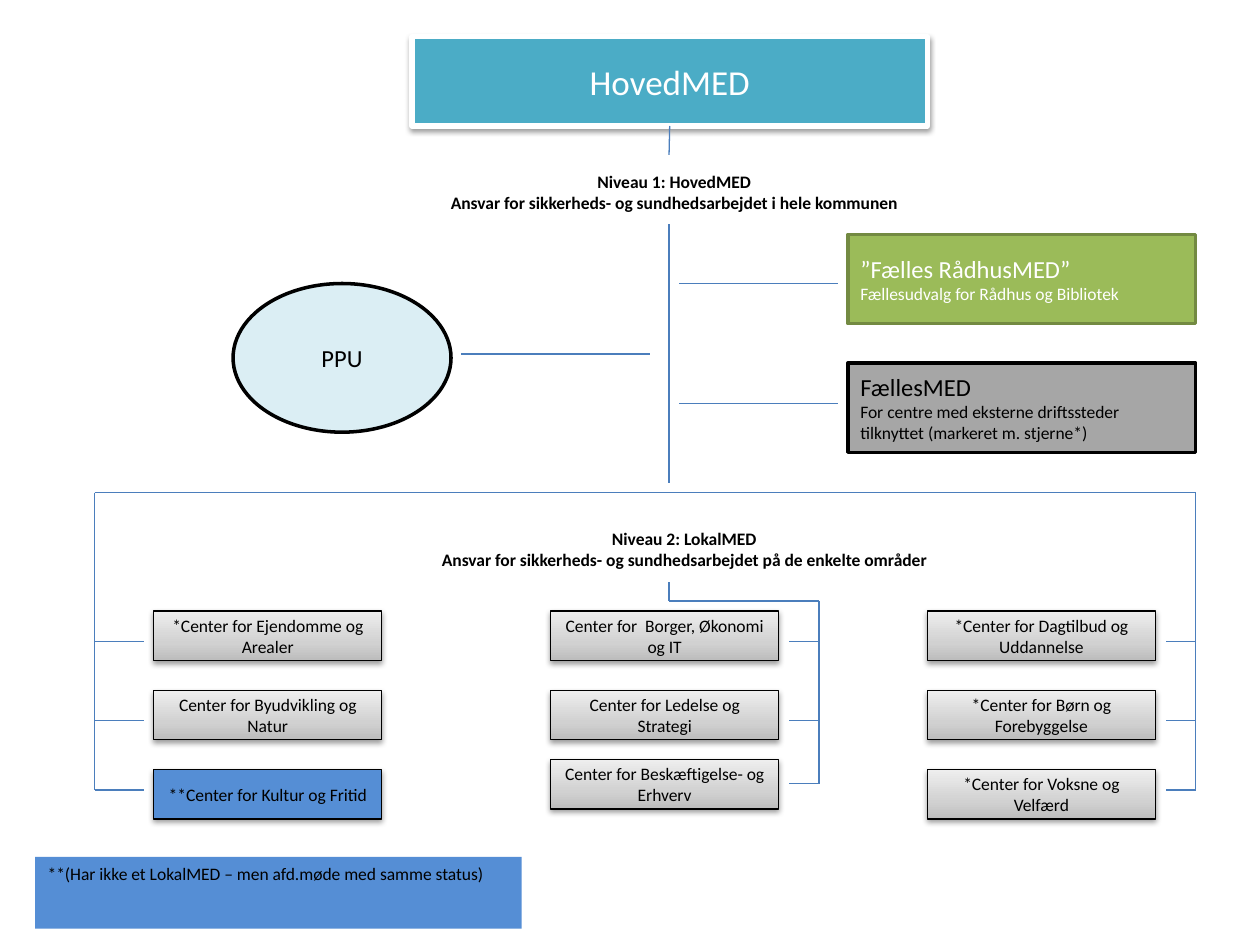
import pptx
import pptx.dml.color
import pptx.enum.shapes
import pptx.enum.text
import pptx.oxml
import pptx.util
from pptx.util import Inches

DRAWING = 'xmlns:a="http://schemas.openxmlformats.org/drawingml/2006/main"'
RECTANGLE = pptx.enum.shapes.MSO_SHAPE.RECTANGLE
OVAL = pptx.enum.shapes.MSO_SHAPE.OVAL
LEFT = pptx.enum.text.PP_ALIGN.LEFT
CENTER = pptx.enum.text.PP_ALIGN.CENTER
TOP = pptx.enum.text.MSO_ANCHOR.TOP
MIDDLE = pptx.enum.text.MSO_ANCHOR.MIDDLE
BLACK, WHITE, BLUE, LINE_BLUE = "000000", "FFFFFF", "558ED5", "4B7EBC"
GRAY_STOPS = [(0, "BDBDBD"), (35, "D1D1D1"), (100, "EEEEEE")]
TRUNK, BRANCH_TOP = 5.31, 3.91

MAIN = ((3.27, 0.29, 4.09, 0.71), [("HovedMED", 20)],
        dict(fill="4BACC6", line=WHITE, width=3, color=WHITE, shadow=True))
COMMITTEES = [
    ((6.73, 1.86, 2.76, 0.71),
     [("”Fælles RådhusMED”", 14), ("Fællesudvalg for Rådhus og Bibliotek", 10)],
     dict(fill="9BBB59", line="738A42", width=2, color=WHITE, align=LEFT)),
    ((6.73, 2.88, 2.76, 0.71),
     [("FællesMED", 14), ("For centre med eksterne driftssteder tilknyttet (markeret m. stjerne*)", 10)],
     dict(fill="A6A6A6", line=BLACK, width=2, align=LEFT)),
    ((1.85, 2.25, 1.73, 1.18), [("PPU", 14)],
     dict(kind=OVAL, fill="DBEEF4", line=BLACK, width=2)),
    ((0.28, 6.8, 3.86, 0.57), [("**(Har ikke et LokalMED – men afd.møde med samme status)", 10)],
     dict(fill=BLUE, align=LEFT, anchor=TOP)),
]
LEVELS = [
    ((2.95, 1.31, 4.8, 0.44), ["Niveau 1: HovedMED",
                               "Ansvar for sikkerheds- og sundhedsarbejdet i hele kommunen"]),
    ((3.03, 4.14, 4.8, 0.44), ["Niveau 2: LokalMED",
                               "Ansvar for sikkerheds- og sundhedsarbejdet på de enkelte områder"]),
]
CENTER_WIDTH, CENTER_HEIGHT = 1.81, 0.39
COLUMNS = [
    dict(left=1.22, spine=0.75, tick=1.14, top=BRANCH_TOP, centers=[
        ("*Center for Ejendomme og Arealer", 4.85, 5.09),
        ("Center for Byudvikling og Natur", 5.48, 5.72),
        ("**Center for Kultur og Fritid", 6.11, 6.27)]),
    dict(left=4.37, spine=6.5, tick=6.26, top=4.77, centers=[
        ("Center for  Borger, Økonomi og IT", 4.85, 5.09),
        ("Center for Ledelse og Strategi", 5.48, 5.72),
        ("Center for Beskæftigelse- og Erhverv", 6.03, 6.22)]),
    dict(left=7.36, spine=9.49, tick=9.25, top=BRANCH_TOP, centers=[
        ("*Center for Dagtilbud og Uddannelse", 4.85, 5.09),
        ("*Center for Børn og Forebyggelse", 5.48, 5.72),
        ("*Center for Voksne og Velfærd", 6.11, 6.27)]),
]
LINES = [
    (TRUNK, 1.78, TRUNK, 3.83), (TRUNK, 4.62, TRUNK, 4.77),
    (0.75, BRANCH_TOP, 9.49, BRANCH_TOP), (TRUNK, 4.77, 6.5, 4.77),
    (3.66, 2.81, 5.16, 2.81), (5.39, 2.25, 6.65, 2.25), (5.39, 3.2, 6.65, 3.2),
]


def rgb(value):
    """Turn a hex string into a colour."""
    return pptx.dml.color.RGBColor.from_string(value)


def write_text(shape, paragraphs, color=BLACK, align=CENTER, anchor=MIDDLE, bold=False):
    """Fill a shape with (text, size) paragraphs."""
    frame = shape.text_frame
    frame.word_wrap = True
    frame.vertical_anchor = anchor
    for index, (text, size) in enumerate(paragraphs):
        paragraph = frame.add_paragraph() if index else frame.paragraphs[0]
        paragraph.alignment = align
        run = paragraph.add_run()
        run.text = text
        run.font.color.rgb = rgb(color)
        for name, value in dict(name="Calibri", size=pptx.util.Pt(size), bold=bold).items():
            setattr(run.font, name, value)


def apply_gradient(shape, stops):
    """Give a shape a gradient that runs from bottom to top."""
    marks = "".join(f'<a:gs pos="{position * 1000}"><a:srgbClr val="{color}"/></a:gs>'
                    for position, color in stops)
    shape.element.spPr.insert(2, pptx.oxml.parse_xml(
        f'<a:gradFill {DRAWING} rotWithShape="1"><a:gsLst>{marks}</a:gsLst>'
        '<a:lin ang="16200000" scaled="0"/></a:gradFill>'))


def apply_shadow(shape):
    """Give a shape a soft shadow below it."""
    shape.element.spPr.append(pptx.oxml.parse_xml(
        f'<a:effectLst {DRAWING}><a:outerShdw blurRad="40000" dist="20000" dir="5400000" '
        'rotWithShape="0"><a:srgbClr val="000000"><a:alpha val="38000"/></a:srgbClr>'
        '</a:outerShdw></a:effectLst>'))


def add_box(slide, place, paragraphs, kind=RECTANGLE, fill=None, line=None, width=0.75,
            shadow=False, **text_format):
    """Add a filled shape with text; no fill means the grey gradient."""
    shape = slide.shapes.add_shape(kind, *map(Inches, place))
    if fill:
        shape.fill.solid()
        shape.fill.fore_color.rgb = rgb(fill)
    else:
        apply_gradient(shape, GRAY_STOPS)
    if line:
        shape.line.color.rgb = rgb(line)
        shape.line.width = pptx.util.Pt(width)
    else:
        shape.line.fill.background()
    if shadow:
        apply_shadow(shape)
    else:
        shape.shadow.inherit = False
    write_text(shape, paragraphs, **text_format)
    return shape


def add_line(slide, *ends):
    """Add a thin straight connector."""
    connector = slide.shapes.add_connector(
        pptx.enum.shapes.MSO_CONNECTOR.STRAIGHT, *map(Inches, ends))
    connector.line.color.rgb = rgb(LINE_BLUE)
    connector.line.width = pptx.util.Pt(0.75)
    connector.element.spPr.append(pptx.oxml.parse_xml(f"<a:effectLst {DRAWING}/>"))
    return connector


def main():
    """Build the organisation chart."""
    presentation = pptx.Presentation()
    presentation.slide_width, presentation.slide_height = Inches(10), Inches(7.5)
    slide = presentation.slides.add_slide(presentation.slide_layouts[6])

    place, paragraphs, style = MAIN
    main_box = add_box(slide, place, paragraphs, **style)
    add_line(slide, TRUNK, 1, TRUNK, 1.23).begin_connect(main_box, 2)
    for place, paragraphs, style in COMMITTEES:
        add_box(slide, place, paragraphs, **style)
    for place, texts in LEVELS:
        label = slide.shapes.add_textbox(*map(Inches, place))
        write_text(label, [(text, 10) for text in texts], anchor=TOP, bold=True)
    for ends in LINES:
        add_line(slide, *ends)

    for column in COLUMNS:
        spine = column["spine"]
        add_line(slide, spine, column["top"], spine, column["centers"][-1][2])
        for name, top, tick_y in column["centers"]:
            add_box(slide, (column["left"], top, CENTER_WIDTH, CENTER_HEIGHT), [(name, 10)],
                    fill=BLUE if name.startswith("**") else None, line=BLACK, shadow=True)
            add_line(slide, spine, tick_y, column["tick"], tick_y)
    presentation.save("out.pptx")


if __name__ == "__main__":
    main()
